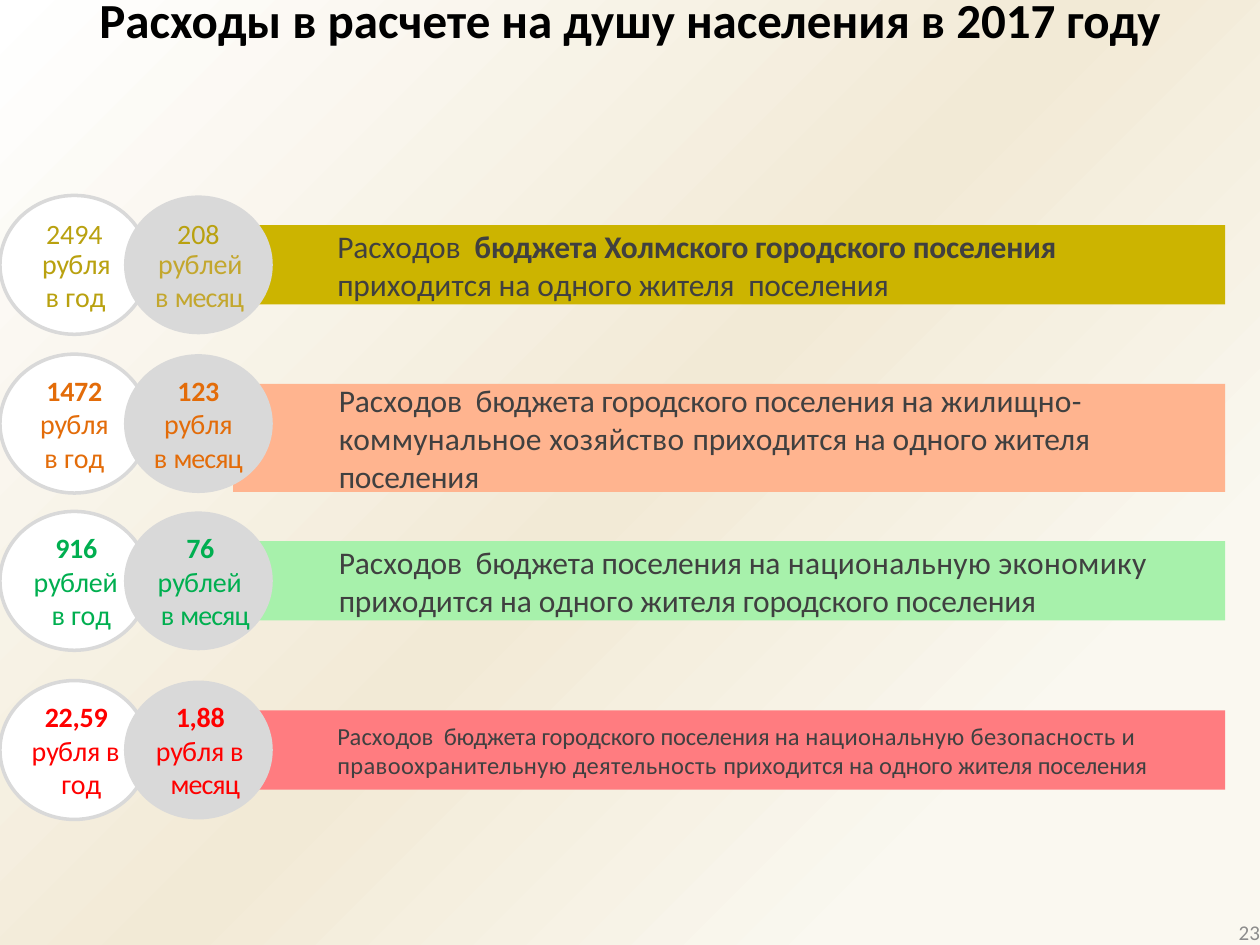
from dataclasses import dataclass

from lxml import etree
from pptx import Presentation
from pptx.dml.color import RGBColor
from pptx.enum import shapes, text
from pptx.oxml import ns
from pptx.util import Cm, Pt

FONT = "Calibri"
BLACK = RGBColor(0x00, 0x00, 0x00)
WHITE = RGBColor(0xFF, 0xFF, 0xFF)
SILVER = RGBColor(0xD9, 0xD9, 0xD9)
GREY = RGBColor(0x8C, 0x8C, 0x8C)
DARK = RGBColor(0x40, 0x40, 0x40)
OLIVE = RGBColor(0xCC, 0xB4, 0x00)
OLIVE_TEXT = RGBColor(0xB9, 0xA1, 0x0F)
OLIVE_SOFT = RGBColor(0xC3, 0xA7, 0x2E)
PEACH = RGBColor(0xFF, 0xB4, 0x8F)
ORANGE = RGBColor(0xE3, 0x6C, 0x09)
MINT = RGBColor(0xA7, 0xF1, 0xAB)
GREEN = RGBColor(0x00, 0xAF, 0x50)
CORAL = RGBColor(0xFF, 0x7C, 0x80)
RED = RGBColor(0xFF, 0x00, 0x00)
BACKGROUND_STOPS = [(19, RGBColor(0xFA, 0xF8, 0xF0)), (50, RGBColor(0xF2, 0xEA, 0xD6)), (100, WHITE)]

# Spans are (text, letter spacing in points[, bold]).
EXPENSES = [("Ра", -0.1), ("с", -0.4), ("х", -0.7), ("о", -0.6)]
FALLS_ON = [("х", -0.7), ("о", -0.6), ("ди", -0.1), ("т", 0.1), ("ся на ", -0.1),
            ("о", -0.6), ("дно", -0.1)]
ROUBLE = [("р", -0.3), ("уб", -0.5)]
YEAR = [("г", -0.5), ("о", -0.6), ("д", -0.1)]
MONTH = [("месяц", -0.5)]

THREE_LINES = [(0, 0)] * 3
HANGING = [(0.08, 0), (0.28, -0.23)]

CIRCLE_W, CIRCLE_H = 3.0, 2.8
MONTH_LEFT = 2.5
BAND_LEFT, BAND_WIDTH, BAND_DROP = 4.7, 20.0, 0.6


def expense_text(subject, ending="о жителя поселения"):
    return EXPENSES + subject + [("при", -0.1)] + FALLS_ON + [("г", -0.5), (ending, -0.1)]


@dataclass
class Expense:
    top: float
    band_height: float
    band_fill: RGBColor
    accent: RGBColor
    year: tuple   # amount and ending of the word for roubles
    month: tuple
    label: list
    indents: list  # left and first-line indent of each circle paragraph
    label_size: int = 18
    label_indent: float = 0
    bold: bool = True
    month_accent: RGBColor = None
    unit_leading: int = None


EXPENSE_ROWS = [
    Expense(3.94, 1.6, OLIVE, OLIVE_TEXT, ("2494", "ля"), ("208", "лей"),
            expense_text([("дов ", -0.1), (" бюджета Холмского городского поселения", -0.1, True),
                          (" ", -0.1)], "о жителя  поселения"),
            [(0, 0), (0.08, 0), (0.05, 0)], bold=False, month_accent=OLIVE_SOFT, unit_leading=17),
    Expense(7.14, 2.18, PEACH, ORANGE, ("1472", "ля"), ("123", "ля"),
            expense_text([("дов  бюджета городского поселения на", -0.1),
                          (" жилищно-коммунальное хозяйство ", 0.2)]),
            THREE_LINES, label_indent=0.03),
    Expense(10.31, 1.6, MINT, GREEN, ("916", "лей"), ("76", "лей"),
            expense_text([("дов  бюджета поселения на", -0.1),
                          (" национальную экономику ", 0.2)], "о жителя городского поселения"),
            HANGING, label_indent=0.03),
    Expense(13.72, 1.6, CORAL, RED, ("22,59", "ля"), ("1,88", "ля"),
            expense_text([("дов  бюджета городского поселения на", -0.1),
                          (" национальную безопасность и правоохранительную деятельность ", 0.2)]),
            HANGING, label_size=14),
]


def add_spans(para, spans, size, color, align=text.PP_ALIGN.LEFT, indent=(0, 0)):
    para.alignment = align
    props = para._p.get_or_add_pPr()
    props.set("marL", str(Cm(indent[0])))
    props.set("indent", str(Cm(indent[1])))
    for words, spacing, *bold in spans:
        span = para.add_run()
        span.text = words
        span.font.name = FONT
        span.font.size = Pt(size)
        span.font.bold = bool(bold and bold[0])
        span.font.color.rgb = color
        if spacing:
            span.font._element.set("spc", str(round(spacing * 100)))


def set_frame(box, left=0, top=0, right=0, bottom=0, anchor=text.MSO_ANCHOR.MIDDLE):
    frame = box.text_frame
    frame.word_wrap = True
    frame.vertical_anchor = anchor
    frame.margin_left, frame.margin_right = Cm(left), Cm(right)
    frame.margin_top, frame.margin_bottom = Cm(top), Cm(bottom)
    return frame


def add_plain_shape(page, kind, left, top, width, height, fill, line=None):
    box = page.shapes.add_shape(kind, Cm(left), Cm(top), Cm(width), Cm(height))
    box.shadow.inherit = False
    box.fill.solid()
    box.fill.fore_color.rgb = fill
    if line is None:
        box.line.fill.background()
    else:
        box.line.color.rgb = line
        box.line.width = Pt(2)
    return box


def add_band(page, row):
    box = add_plain_shape(page, shapes.MSO_SHAPE.RECTANGLE, BAND_LEFT, row.top + BAND_DROP,
                          BAND_WIDTH, row.band_height, row.band_fill)
    frame = set_frame(box, left=2.1, right=0.25)
    add_spans(frame.paragraphs[0], row.label, row.label_size, DARK, indent=(row.label_indent, 0))


def add_circle(page, row, left, fill, line, sum_of_money, period, accent):
    amount, ending = sum_of_money
    box = add_plain_shape(page, shapes.MSO_SHAPE.OVAL, left, row.top, CIRCLE_W, CIRCLE_H, fill, line)
    frame = set_frame(box)
    unit = ROUBLE + [(ending, -0.1)]
    when = [("в ", 0)] + period
    if len(row.indents) == 3:
        lines = [unit, when]
    else:
        lines = [ROUBLE + [(ending + " в ", -0.1)] + period]
    center = text.PP_ALIGN.CENTER
    add_spans(frame.paragraphs[0], [(amount, -0.1 if row.bold else 0, row.bold)], 16,
              row.accent, center, row.indents[0])
    for spans, indent in zip(lines, row.indents[1:]):
        para = frame.add_paragraph()
        add_spans(para, spans, 16, accent, center, indent)
        if row.unit_leading and spans is unit:
            para.line_spacing = Pt(row.unit_leading)


def add_expense_row(page, row):
    add_band(page, row)
    add_circle(page, row, 0, WHITE, SILVER, row.year, YEAR, row.accent)
    add_circle(page, row, MONTH_LEFT, SILVER, None, row.month, MONTH,
               row.month_accent or row.accent)


def add_title(page, left, top, width, height):
    box = page.shapes.add_textbox(Cm(left), Cm(top), Cm(width), Cm(height))
    frame = set_frame(box, 0.25, 0.13, 0.25, 0.13, text.MSO_ANCHOR.TOP)
    para = frame.paragraphs[0]
    add_spans(para, [("Расходы в расчете на душу населения в 2017 году", 0, True)], 28,
              BLACK, text.PP_ALIGN.CENTER)
    para.line_spacing = Pt(24)


def add_page_number(page, left, top, width, height):
    box = page.shapes.add_textbox(Cm(left), Cm(top), Cm(width), Cm(height))
    add_spans(set_frame(box).paragraphs[0], [("23", 0)], 12, GREY, text.PP_ALIGN.RIGHT)


def set_background(page):
    """Radial gradient centred on the lower right corner."""
    stops = "".join(f'<a:gs pos="{place * 1000}"><a:srgbClr val="{color}"/></a:gs>'
                    for place, color in BACKGROUND_STOPS)
    page.element.cSld.insert(0, etree.fromstring(
        f'<p:bg {ns.nsdecls("p", "a")}><p:bgPr><a:gradFill rotWithShape="1">'
        f'<a:gsLst>{stops}</a:gsLst><a:path path="circle">'
        '<a:fillToRect l="100000" t="100000"/></a:path></a:gradFill>'
        '<a:effectLst/></p:bgPr></p:bg>'))


def main():
    deck = Presentation()
    deck.slide_width, deck.slide_height = Cm(25.4), Cm(19.05)
    page = deck.slides.add_slide(deck.slide_layouts[6])
    set_background(page)
    for row in EXPENSE_ROWS:
        add_expense_row(page, row)
    add_title(page, 0, 0, 25.4, 1.73)
    add_page_number(page, 19.48, 18.52, 5.92, 0.53)
    deck.save("out.pptx")


if __name__ == "__main__":
    main()
